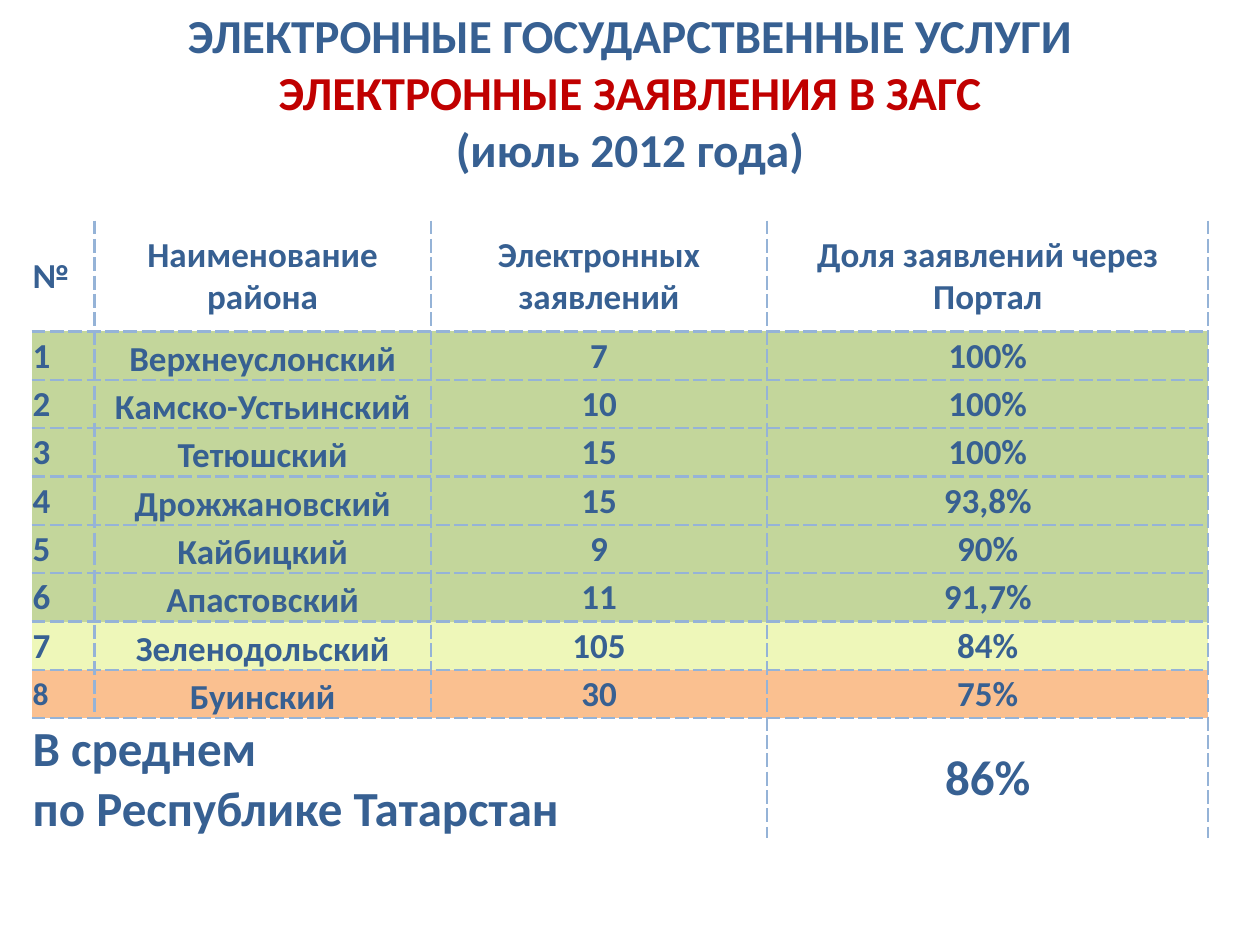
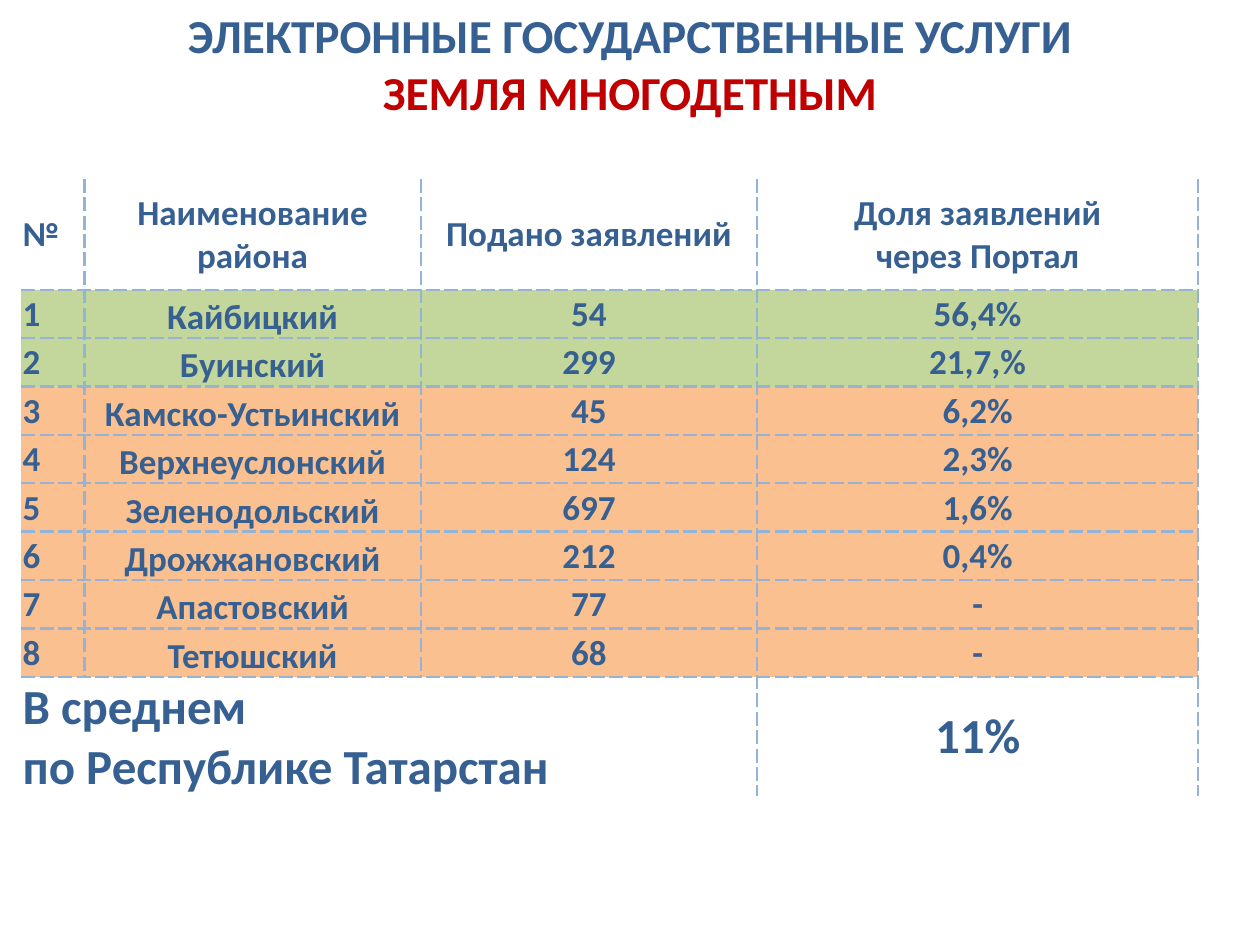
"""Build two slides of district tables on electronic public services."""
from lxml.etree import SubElement
from pptx import Presentation
from pptx.dml.color import RGBColor
from pptx.enum.text import MSO_ANCHOR, MSO_AUTO_SIZE, PP_ALIGN
from pptx.oxml.ns import qn
from pptx.util import Inches, Pt

BLUE = RGBColor(0x37, 0x60, 0x92)
RED = RGBColor(0xC0, 0x00, 0x00)
RULE = RGBColor(0x95, 0xB3, 0xD7)
GREEN = RGBColor(0xC3, 0xD6, 0x9B)
YELLOW = RGBColor(0xEE, 0xF7, 0xB9)
ORANGE = RGBColor(0xFA, 0xC0, 0x90)

FONT = "Calibri"
TITLE_SIZE, BODY_SIZE, TOTAL_SIZE = 27, 20, 28
HEADING = "ЭЛЕКТРОННЫЕ ГОСУДАРСТВЕННЫЕ УСЛУГИ"
TOTAL_LABEL = "В среднем\nпо Республике Татарстан"
COLUMN_WIDTHS = [0.5, 2.67, 2.67, 3.5]
HEADER_HEIGHT, ROW_HEIGHT, TOTAL_HEIGHT = 0.88, 0.38, 0.95
NAME_COLUMN = 1

SLIDES = [
    {
        "title": [(HEADING, BLUE), ("ЭЛЕКТРОННЫЕ ЗАЯВЛЕНИЯ В ЗАГС", RED),
                  ("(июль 2012 года)", BLUE)],
        "title_height": 1.46,
        "table_at": (0.25, 1.75),
        "header": ["№", "Наименование района", "Электронных заявлений",
                   "Доля заявлений через Портал"],
        "districts": [
            ("Верхнеуслонский", "7", "100%", GREEN),
            ("Камско-Устьинский", "10", "100%", GREEN),
            ("Тетюшский", "15", "100%", GREEN),
            ("Дрожжановский", "15", "93,8%", GREEN),
            ("Кайбицкий", "9", "90%", GREEN),
            ("Апастовский", "11", "91,7%", GREEN),
            ("Зеленодольский", "105", "84%", YELLOW),
            ("Буинский", "30", "75%", ORANGE),
        ],
        "number_sizes": {8: 18},
        "average": "86%",
    },
    {
        "title": [(HEADING, BLUE), ("ЗЕМЛЯ МНОГОДЕТНЫМ", RED)],
        "title_height": 1.01,
        "table_at": (0.17, 1.42),
        "header": ["№", "Наименование района", "Подано заявлений",
                   "Доля заявлений\nчерез Портал"],
        "districts": [
            ("Кайбицкий", "54", "56,4%", GREEN),
            ("Буинский", "299", "21,7,%", GREEN),
            ("Камско-Устьинский", "45", "6,2%", ORANGE),
            ("Верхнеуслонский", "124", "2,3%", ORANGE),
            ("Зеленодольский", "697", "1,6%", ORANGE),
            ("Дрожжановский", "212", "0,4%", ORANGE),
            ("Апастовский", "77", "-", ORANGE),
            ("Тетюшский", "68", "-", ORANGE),
        ],
        "number_sizes": {},
        "average": "11%",
    },
]


def style_paragraph(para, size, color, align):
    para.alignment = align
    para.font.name = FONT
    para.font.size = Pt(size)
    para.font.bold = True
    para.font.color.rgb = color


def add_title(page, lines, height):
    title = page.shapes.title
    title.left, title.top = Inches(0), Inches(0)
    title.width, title.height = Inches(10), Inches(height)
    frame = title.text_frame
    frame.text = "\n".join(text for text, _ in lines)
    frame.word_wrap = True
    frame.auto_size = MSO_AUTO_SIZE.SHAPE_TO_FIT_TEXT
    frame.vertical_anchor = MSO_ANCHOR.TOP
    for para, (_, color) in zip(frame.paragraphs, lines):
        style_paragraph(para, TITLE_SIZE, color, PP_ALIGN.CENTER)


def set_borders(cell, sides):
    """Draw dashed rules on the given sides and clear the others."""
    properties = cell._tc.get_or_add_tcPr()
    for side in "LRTB":
        line = SubElement(properties, qn(f"a:ln{side}"), w=str(Pt(1.5)))
        if side in sides:
            fill = SubElement(line, qn("a:solidFill"))
            SubElement(fill, qn("a:srgbClr"), val=str(RULE))
            SubElement(line, qn("a:prstDash"), val="sysDash")
        else:
            SubElement(line, qn("a:noFill"))


def fill_cell(cell, text, size, align, color=None, is_name=False):
    cell.text = text
    side_margin = 0.07 if is_name else 0.01
    cell.margin_left = cell.margin_right = Inches(side_margin)
    cell.margin_top = Inches(0 if is_name else 0.01)
    cell.margin_bottom = Inches(0)
    cell.vertical_anchor = MSO_ANCHOR.TOP if is_name else MSO_ANCHOR.MIDDLE
    if color is None:
        cell.fill.background()
    else:
        cell.fill.solid()
        cell.fill.fore_color.rgb = color
    for para in cell.text_frame.paragraphs:
        style_paragraph(para, size, BLUE, align)
        if is_name:
            para.line_spacing = 1.15


def add_district_table(page, content):
    districts = content["districts"]
    heights = [HEADER_HEIGHT, *[ROW_HEIGHT] * len(districts), TOTAL_HEIGHT]
    last = len(heights) - 1
    left, top = content["table_at"]
    table = page.shapes.add_table(
        len(heights), len(COLUMN_WIDTHS), Inches(left), Inches(top),
        Inches(sum(COLUMN_WIDTHS)), Inches(sum(heights))).table
    table.first_row = table.horz_banding = False
    for column, width in zip(table.columns, COLUMN_WIDTHS):
        column.width = Inches(width)
    for row, height in zip(table.rows, heights):
        row.height = Inches(height)

    rows = [(content["header"], None)]
    for number, (*values, color) in enumerate(districts, 1):
        rows.append(([str(number), *values], color))
    rows.append(([TOTAL_LABEL, "", "", content["average"]], None))

    for r, (texts, color) in enumerate(rows):
        size = TOTAL_SIZE if r == last else BODY_SIZE
        for c, text in enumerate(texts):
            cell = table.cell(r, c)
            sides = "R" + "L" * (c > 0) + "T" * (r > 0) + "B" * (r < last)
            set_borders(cell, sides)
            fill_cell(cell, text,
                      content["number_sizes"].get(r, size) if c == 0 else size,
                      PP_ALIGN.CENTER if c else PP_ALIGN.LEFT, color,
                      is_name=c == NAME_COLUMN and 0 < r < last)
    table.cell(last, 0).merge(table.cell(last, 2))


def main():
    deck = Presentation()
    deck.slide_width, deck.slide_height = Inches(10), Inches(7.5)
    title_only = deck.slide_layouts.get_by_name("Title Only")
    for content in SLIDES:
        page = deck.slides.add_slide(title_only)
        add_title(page, content["title"], content["title_height"])
        add_district_table(page, content)
    deck.save("out.pptx")


if __name__ == "__main__":
    main()
